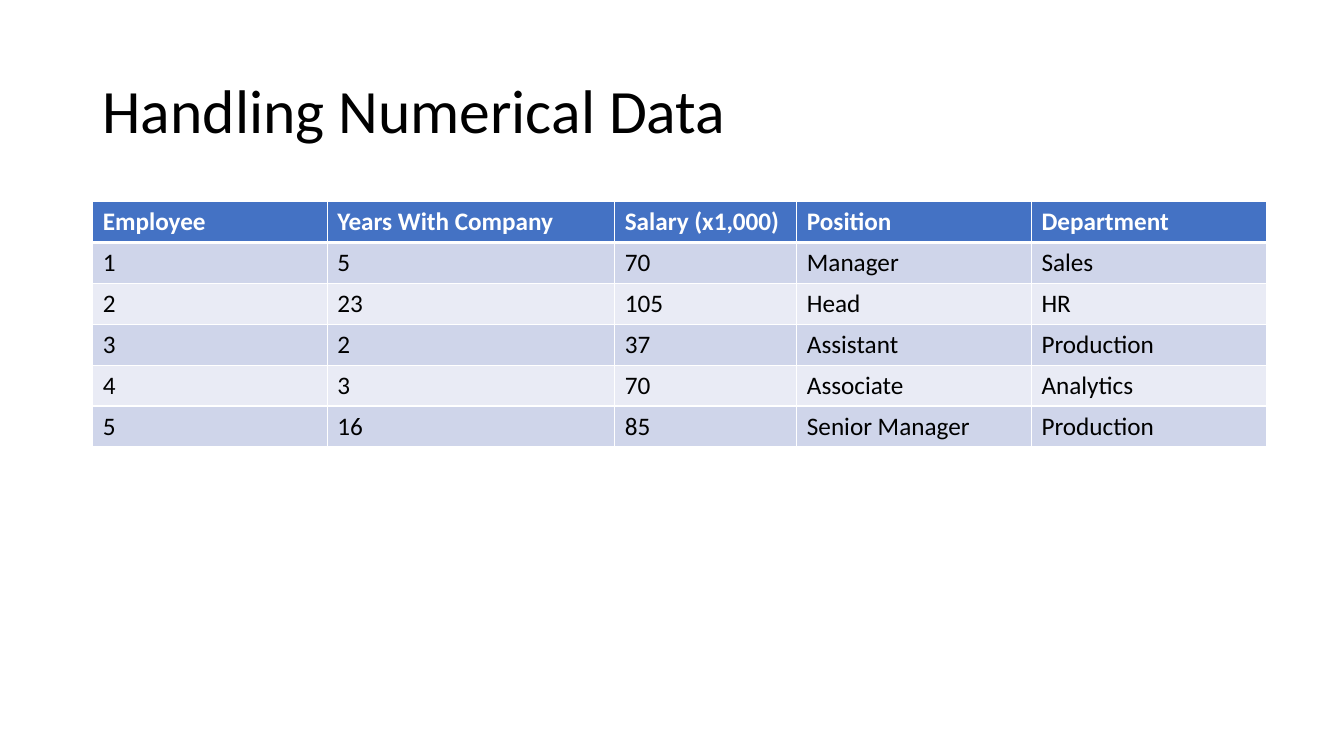
"""Build a slide with a table of employee data."""
from lxml import etree
from pptx import Presentation
from pptx.dml.color import RGBColor
from pptx.enum.text import MSO_ANCHOR
from pptx.oxml.ns import qn
from pptx.util import Pt

MIDDLE = MSO_ANCHOR.MIDDLE
FONT = "Calibri"
COLOURS = {
    "text": "000000",
    "header_text": "FFFFFF",
    "border": "FFFFFF",
    "header": "4472C4",
    "odd_row": "CFD5EA",
    "even_row": "E9EBF5",
}
LEFT = 66.24
ROW_HEIGHT = 29.2
COLUMN_WIDTHS = [167.6, 205.3, 130.1, 167.6, 167.6]
EMPLOYEES = [
    ["Employee", "Years With Company", "Salary (x1,000)", "Position", "Department"],
    ["1", "5", "70", "Manager", "Sales"],
    ["2", "23", "105", "Head", "HR"],
    ["3", "2", "37", "Assistant", "Production"],
    ["4", "3", "70", "Associate", "Analytics"],
    ["5", "16", "85", "Senior Manager", "Production"],
]


def colour(name):
    return RGBColor.from_string(COLOURS[name])


def add_span(para, text, size, colour_name, bold=False):
    span = para.add_run()
    span.text = text
    span.font.name = FONT
    span.font.size = Pt(size)
    span.font.bold = bold
    span.font.color.rgb = colour(colour_name)


def add_title(page, text):
    box = page.shapes.add_textbox(Pt(LEFT), Pt(28.75), Pt(828), Pt(104.4))
    frame = box.text_frame
    frame.word_wrap = True
    frame.vertical_anchor = MIDDLE
    para = frame.paragraphs[0]
    para.line_spacing = 0.9
    add_span(para, text, 44, "text")


def set_borders(cell, widths):
    properties = cell._tc.get_or_add_tcPr()
    for position, (side, width) in enumerate(widths.items()):
        line = etree.Element(qn("a:" + side), w=str(Pt(width)))
        fill = etree.SubElement(line, qn("a:solidFill"))
        etree.SubElement(fill, qn("a:srgbClr"), val=COLOURS["border"])
        properties.insert(position, line)


def style_cell(cell, text, row_index):
    is_header = row_index == 0
    stripe = "odd_row" if row_index % 2 else "even_row"
    cell.fill.solid()
    cell.fill.fore_color.rgb = colour("header" if is_header else stripe)
    text_colour = "header_text" if is_header else "text"
    add_span(cell.text_frame.paragraphs[0], text, 18, text_colour, is_header)
    top = 3 if row_index == 1 else 1
    bottom = 3 if is_header else 1
    set_borders(cell, {"lnL": 1, "lnR": 1, "lnT": top, "lnB": bottom})


def add_data_table(page, rows):
    frame = page.shapes.add_table(
        len(rows), len(COLUMN_WIDTHS), Pt(LEFT), Pt(144),
        Pt(sum(COLUMN_WIDTHS)), Pt(ROW_HEIGHT * len(rows)),
    )
    table = frame.table
    for column, width in zip(table.columns, COLUMN_WIDTHS):
        column.width = Pt(width)
    for row_index, values in enumerate(rows):
        table.rows[row_index].height = Pt(ROW_HEIGHT)
        for column_index, text in enumerate(values):
            style_cell(table.cell(row_index, column_index), text, row_index)


def main():
    deck = Presentation()
    deck.slide_width, deck.slide_height = Pt(960), Pt(540)
    page = deck.slides.add_slide(deck.slide_layouts[6])
    add_title(page, "Handling Numerical Data")
    add_data_table(page, EMPLOYEES)
    deck.save("out.pptx")


if __name__ == "__main__":
    main()
